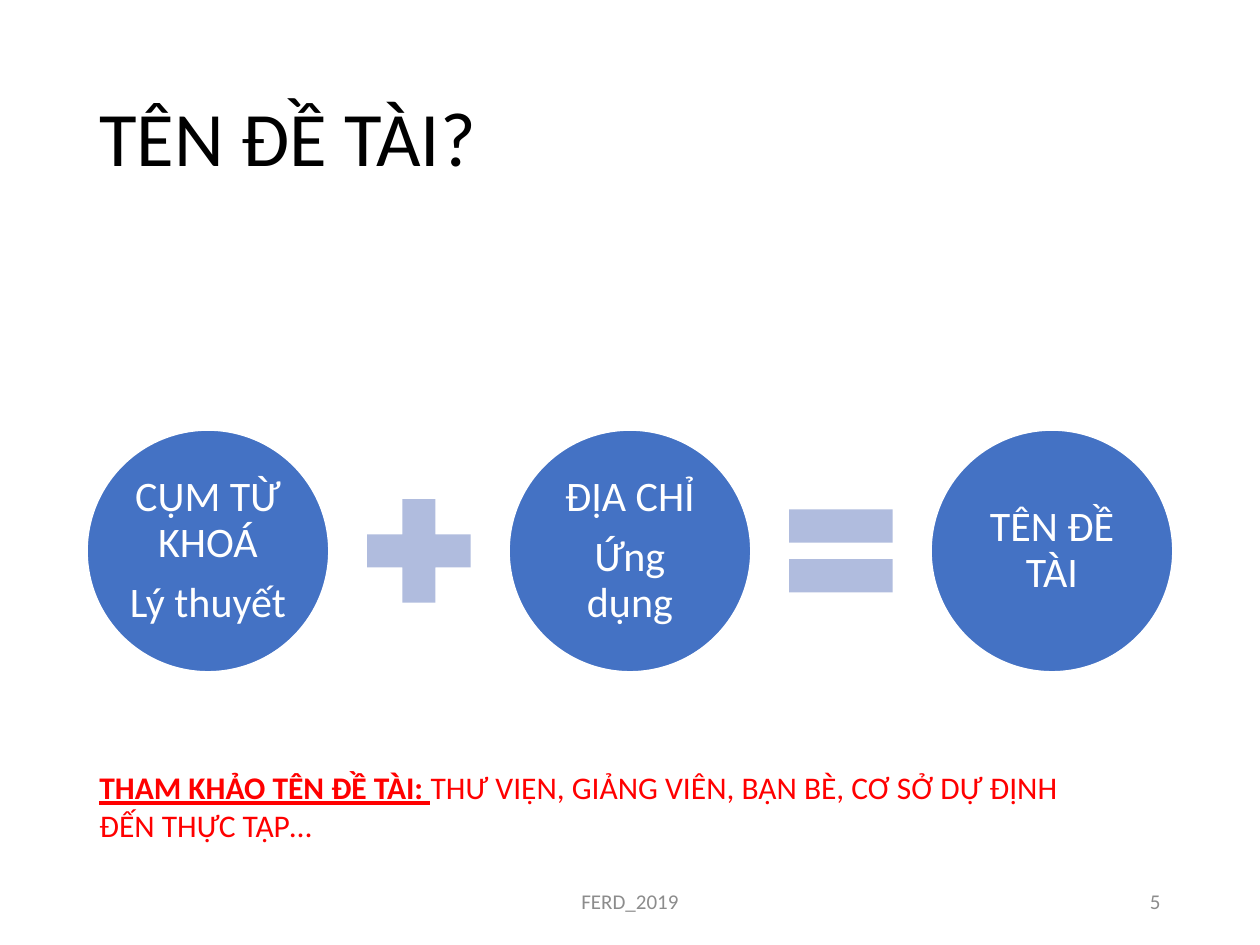
import pptx
import pptx.dml.color
import pptx.enum.shapes
import pptx.enum.text
import pptx.util

PX_PER_INCH = 126
FONT = "Calibri"
BLACK, WHITE, RED, GREY = "000000", "FFFFFF", "FF0000", "8C8C8C"
BLUE, PALE_BLUE = "4472C4", "B0BCDE"

SHAPE = pptx.enum.shapes.MSO_SHAPE
ALIGN = pptx.enum.text.PP_ALIGN
ANCHOR = pptx.enum.text.MSO_ANCHOR


def px(length):
    return pptx.util.Emu(round(length * 914400 / PX_PER_INCH))


def color(hex_string):
    return pptx.dml.color.RGBColor.from_string(hex_string)


def style_run(run, size, hex_string):
    run.font.name = FONT
    run.font.size = pptx.util.Pt(size)
    run.font.color.rgb = color(hex_string)


def style_frame(frame, size, hex_string, align=ALIGN.LEFT, anchor=ANCHOR.MIDDLE):
    frame.word_wrap = True
    frame.vertical_anchor = anchor
    for paragraph in frame.paragraphs:
        paragraph.alignment = align
        for run in paragraph.runs:
            style_run(run, size, hex_string)


def add_text(slide, box, text, size, hex_string, **layout):
    frame = slide.shapes.add_textbox(*map(px, box)).text_frame
    frame.text = text
    style_frame(frame, size, hex_string, **layout)
    return frame


def add_filled(slide, preset, box, fill):
    shape = slide.shapes.add_shape(preset, *map(px, box))
    shape.shadow.inherit = False
    shape.fill.solid()
    shape.fill.fore_color.rgb = color(fill)
    shape.line.fill.background()
    return shape


def add_title(slide, box, text):
    frame = add_text(slide, box, text, 44, BLACK)
    frame.paragraphs[0].line_spacing = 0.9


def add_term(slide, box, lines):
    circle = add_filled(slide, SHAPE.OVAL, box, BLUE)
    circle.line.color.rgb = color(WHITE)
    circle.line.width = pptx.util.Pt(1)
    frame = circle.text_frame
    frame.margin_left = frame.margin_right = px(4)
    frame.margin_top = frame.margin_bottom = px(4)
    frame.text = "\n".join(lines)
    style_frame(frame, 24, WHITE, align=ALIGN.CENTER)
    for paragraph in frame.paragraphs:
        paragraph.line_spacing = 0.9
        paragraph.space_after = pptx.util.Pt(8.4)


def add_equation(slide, box, terms, operators):
    """Circles spread evenly over the box, with an operator centred in each gap."""
    left, top, width, diameter = box
    pitch = (width - diameter) / (len(terms) - 1)
    operator_size = 141
    operator_left = (pitch + diameter - operator_size) / 2
    operator_top = top + (diameter - operator_size) / 2
    for index, lines in enumerate(terms):
        term_left = left + index * pitch
        add_term(slide, (term_left, top, diameter, diameter), lines)
        if index < len(operators):
            add_filled(slide, operators[index],
                       (term_left + operator_left, operator_top,
                        operator_size, operator_size), PALE_BLUE)


def add_reference(slide, box, heading, sources):
    frame = add_text(slide, box, heading, 18, RED, anchor=ANCHOR.TOP)
    paragraph = frame.paragraphs[0]
    paragraph.runs[0].font.bold = True
    paragraph.runs[0].font.underline = True
    sources_run = paragraph.add_run()
    sources_run.text = sources
    style_run(sources_run, 18, RED)


def add_footer(slide, box, label, number):
    left, top, width, height = box
    label_width, number_width = 426, 284
    add_text(slide, (left + (width - label_width) / 2, top, label_width, height),
             label, 12, GREY, align=ALIGN.CENTER)
    add_text(slide, (left + width - number_width, top, number_width, height),
             number, 12, GREY, align=ALIGN.RIGHT)


def main():
    deck = pptx.Presentation()
    deck.slide_width, deck.slide_height = px(1260), px(945)
    slide = deck.slides.add_slide(deck.slide_layouts[6])

    # Title
    add_title(slide, (87, 50, 1086, 183), "TÊN ĐỀ TÀI?")

    # Keywords + place = topic name
    add_equation(
        slide, (87, 430, 1086, 242),
        [["CỤM TỪ KHOÁ", "Lý thuyết"], ["ĐỊA CHỈ", "Ứng dụng"], ["TÊN ĐỀ TÀI"]],
        [SHAPE.MATH_PLUS, SHAPE.MATH_EQUAL])

    # Where to look for topic names
    add_reference(slide, (87, 762, 1036, 89), "THAM KHẢO TÊN ĐỀ TÀI: ",
                  "THƯ VIỆN, GIẢNG VIÊN, BẠN BÈ, CƠ SỞ DỰ ĐỊNH ĐẾN THỰC TẬP…")

    # Footer
    add_footer(slide, (87, 876, 1086, 50), "FERD_2019", "5")

    deck.save("out.pptx")


if __name__ == "__main__":
    main()
